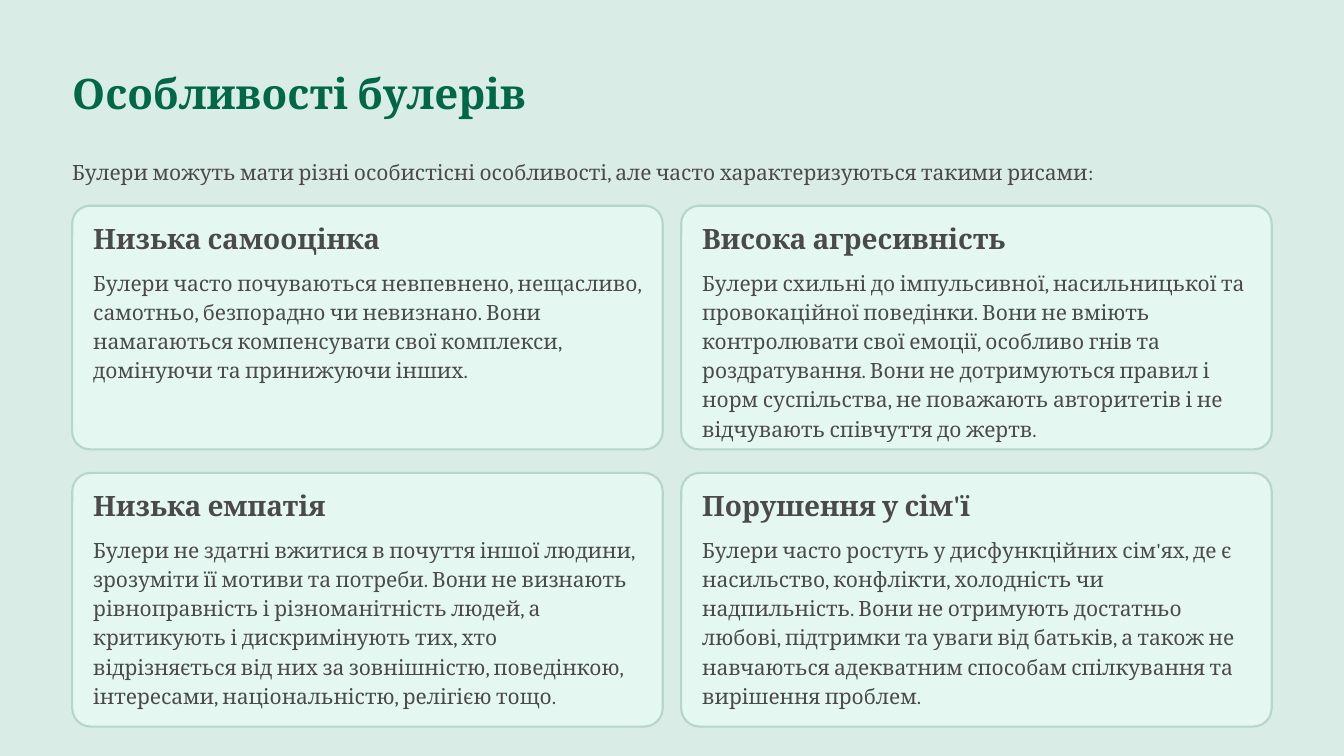
from dataclasses import dataclass

from pptx import Presentation
from pptx.dml.color import RGBColor as Color
from pptx.enum.shapes import MSO_SHAPE as Kind
from pptx.enum.text import MSO_ANCHOR as Anchor, MSO_AUTO_SIZE as Fit, PP_ALIGN as Align
from pptx.shapes.autoshape import Shape
from pptx.slide import Slide
from pptx.util import Inches, Pt

BACK = Color(0xD9, 0xEC, 0xE5)
PANEL = Color(0xE4, 0xF8, 0xF1)
EDGE = Color(0xB7, 0xD5, 0xCA)
GREEN = Color(0x00, 0x67, 0x47)
GREY = Color(0x4B, 0x4A, 0x4A)
FONT = "Cambria"

LEFT, WIDE, STEP, PAD = 0.86, 7.03, 7.25, 0.25
ROWS = [(2.45, 2.9), (5.63, 3.02)]


@dataclass
class Style:
    size: int
    lead: float
    color: Color = GREY
    bold: bool = False
    wrap: bool = False


@dataclass
class Trait:
    name: str
    span: float
    text: str
    tall: float


TITLE = Style(36, 39.5, GREEN, True)
INTRO = Style(18, 25)
HEAD = Style(24, 24.5, bold=True)
BODY = Style(18, 25, wrap=True)

TRAITS = [
    Trait("Низька самооцінка", 2.84,
          "Булери часто почуваються невпевнено, нещасливо, самотньо, безпорадно "
          "чи невизнано. Вони намагаються компенсувати свої комплекси, домінуючи "
          "та принижуючи інших.", 1.41),
    Trait("Висока агресивність", 3.05,
          "Булери схильні до імпульсивної, насильницької та провокаційної "
          "поведінки. Вони не вміють контролювати свої емоції, особливо гнів та "
          "роздратування. Вони не дотримуються правил і норм суспільства, не "
          "поважають авторитетів і не відчувають співчуття до жертв.", 1.77),
    Trait("Низька емпатія", 2.76,
          "Булери не здатні вжитися в почуття іншої людини, зрозуміти її мотиви "
          "та потреби. Вони не визнають рівноправність і різноманітність людей, а "
          "критикують і дискримінують тих, хто відрізняється від них за "
          "зовнішністю, поведінкою, інтересами, національністю, релігією тощо.", 2.01),
    Trait("Порушення у сім'ї", 2.76,
          "Булери часто ростуть у дисфункційних сім'ях, де є насильство, "
          "конфлікти, холодність чи надпильність. Вони не отримують достатньо "
          "любові, підтримки та уваги від батьків, а також не навчаються "
          "адекватним способам спілкування та вирішення проблем.", 1.77),
]


def write(box: Shape, text: str, style: Style) -> None:
    frame = box.text_frame
    frame.text = text
    frame.auto_size = Fit.NONE
    frame.word_wrap = style.wrap
    frame.vertical_anchor = Anchor.TOP
    frame.margin_left = frame.margin_right = 0
    frame.margin_top = frame.margin_bottom = 0
    para = frame.paragraphs[0]
    para.alignment = Align.LEFT
    para.line_spacing = Pt(style.lead)
    font = para.font
    font.name = FONT
    font.size = Pt(style.size)
    font.bold = style.bold
    font.color.rgb = style.color


def label(slide: Slide, x: float, y: float, w: float, h: float,
          text: str, style: Style) -> None:
    box = slide.shapes.add_textbox(Inches(x), Inches(y), Inches(w), Inches(h))
    write(box, text, style)


def card(slide: Slide, x: float, y: float, h: float, trait: Trait) -> None:
    panel = slide.shapes.add_shape(
        Kind.ROUNDED_RECTANGLE, Inches(x), Inches(y), Inches(WIDE), Inches(h))
    panel.adjustments[0] = 0.073
    panel.shadow.inherit = False
    panel.fill.solid()
    panel.fill.fore_color.rgb = PANEL
    panel.line.color.rgb = EDGE
    panel.line.width = Pt(1.8)
    label(slide, x + PAD, y + PAD, trait.span, 0.35, trait.name, HEAD)
    label(slide, x + PAD, y + 0.72, 6.54, trait.tall, trait.text, BODY)


def main() -> None:
    deck = Presentation()
    deck.slide_width, deck.slide_height = Inches(16), Inches(9)
    slide = deck.slides.add_slide(deck.slide_layouts.get_by_name("Title Only"))
    fill = slide.background.fill
    fill.solid()
    fill.fore_color.rgb = BACK

    title = slide.shapes.title
    title.left, title.top = Inches(LEFT), Inches(0.85)
    title.width, title.height = Inches(6), Inches(0.55)
    write(title, "Особливості булерів", TITLE)
    label(slide, LEFT, 1.85, 14.28, 0.35,
          "Булери можуть мати різні особистісні особливості, але часто "
          "характеризуються такими рисами:", INTRO)

    for i, trait in enumerate(TRAITS):
        row, col = divmod(i, 2)
        top, high = ROWS[row]
        card(slide, LEFT + col * STEP, top, high, trait)
    deck.save("out.pptx")


if __name__ == "__main__":
    main()
